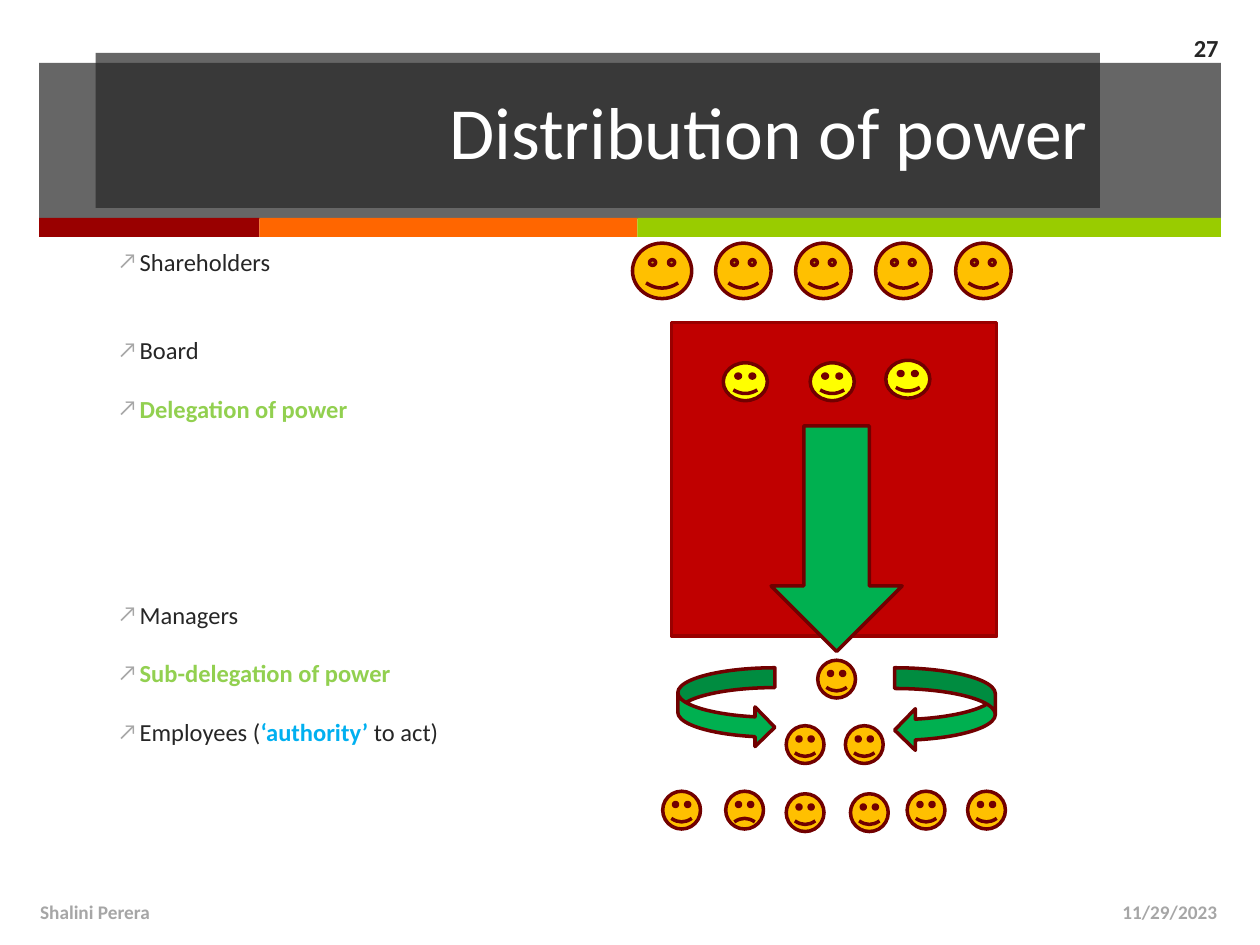
from collections import namedtuple
from dataclasses import dataclass

from lxml import etree
from pptx import Presentation
from pptx.dml import color
from pptx.enum import shapes, text
from pptx.oxml import ns
from pptx.util import Inches, Pt

COLUMNS, ROWS = 100, 75
SLIDE_WIDTH, SLIDE_HEIGHT = Inches(10), Inches(7.5)
SHAPE = shapes.MSO_SHAPE
RIGHT = text.PP_ALIGN.RIGHT
LEFT = text.PP_ALIGN.LEFT
MIDDLE = text.MSO_ANCHOR.MIDDLE
TOP = text.MSO_ANCHOR.TOP

Box = namedtuple("Box", "x y w h")


@dataclass(frozen=True)
class Theme:
    font: str = "Calibri"
    ink: str = "262626"
    white: str = "FFFFFF"
    muted: str = "A6A6A6"
    bands: tuple = ("990000", "FF6600", "99CC00")
    power: str = "92D050"
    authority: str = "00B0F0"
    board: str = "C00000"
    board_edge: str = "990000"
    director: str = "FFFF00"
    person: str = "FFC000"
    arrow: str = "00B050"
    edge: str = "710000"
    title_size: int = 42
    body_size: int = 14
    footer_size: int = 11
    edge_width: int = 2
    row_pitch: float = 16.8


THEME = Theme()


def apply(target, values):
    for name, value in values.items():
        setattr(target, name, value)


def inside(box, x, y, w, h):
    return Box(box.x + x, box.y + y, w, h)


def emu(box):
    column, row = SLIDE_WIDTH / COLUMNS, SLIDE_HEIGHT / ROWS
    return [round(n * unit) for n, unit in zip(box, (column, row, column, row))]


def draw(slide, kind, box, fill, edge=None, alpha=None):
    drawn = slide.shapes.add_shape(kind, *emu(box))
    drawn.shadow.inherit = False
    drawn.fill.solid()
    drawn.fill.fore_color.rgb = color.RGBColor.from_string(fill)
    if alpha:
        tint = drawn.fill._xPr.find(".//" + ns.qn("a:srgbClr"))
        etree.SubElement(tint, ns.qn("a:alpha"), val=str(alpha * 1000))
    if edge:
        drawn.line.color.rgb = color.RGBColor.from_string(edge)
        drawn.line.width = Pt(THEME.edge_width)
    else:
        drawn.line.fill.background()
    return drawn


def add_run(paragraph, words, size, ink, bold=False):
    run = paragraph.add_run()
    run.text = words
    apply(run.font, {"name": THEME.font, "size": Pt(size), "bold": bold})
    run.font.color.rgb = color.RGBColor.from_string(ink)


def write(holder, words, size, ink, align, bold=False):
    frame = holder.text_frame
    apply(frame, {"word_wrap": True, "vertical_anchor": MIDDLE})
    paragraph = frame.paragraphs[0]
    paragraph.alignment = align
    add_run(paragraph, words, size, ink, bold)


def label(slide, box, *style):
    write(slide.shapes.add_textbox(*emu(box)), *style)


def add_bullet(paragraph):
    properties = paragraph._p.get_or_add_pPr()
    indent = Inches(0.17)
    properties.set("marL", str(indent))
    properties.set("indent", str(-indent))
    tint = etree.SubElement(properties, ns.qn("a:buClr"))
    etree.SubElement(tint, ns.qn("a:srgbClr"), val=THEME.muted)
    etree.SubElement(properties, ns.qn("a:buSzPct"), val="90000")
    etree.SubElement(properties, ns.qn("a:buFont"), typeface=THEME.font)
    etree.SubElement(properties, ns.qn("a:buChar"), char="↗")


def header(slide, box):
    draw(slide, SHAPE.RECTANGLE, inside(box, 0, 0, box.w, 12.4), THEME.ink, alpha=70)
    x = 0
    for width, fill in zip((17.5, 30, 46.3), THEME.bands):
        draw(slide, SHAPE.RECTANGLE, inside(box, x, 12.3, width, 1.5), fill)
        x += width
    title = draw(slide, SHAPE.RECTANGLE, inside(box, 4.5, -0.8, 79.7, 12.3), THEME.ink, alpha=70)
    write(title, "Distribution of power", THEME.title_size, THEME.white, RIGHT)
    label(slide, inside(box, 87.7, -3.2, 6.9, 3.9), "27", THEME.body_size, THEME.ink, RIGHT, True)


def topics(slide, box):
    plain, power, authority = (THEME.ink, False), (THEME.power, True), (THEME.authority, True)
    entries = [
        (0, [("Shareholders", plain)]),
        (2, [("Board", plain)]),
        (1, [("Delegation of power", power)]),
        (6, [("Managers", plain)]),
        (1, [("Sub-delegation of power", power)]),
        (1, [("Employees (", plain), ("‘authority’ ", authority), ("to act)", plain)]),
    ]
    frame = slide.shapes.add_textbox(*emu(box)).text_frame
    apply(frame, {"word_wrap": True, "vertical_anchor": TOP})
    for index, (gap_rows, pieces) in enumerate(entries):
        paragraph = frame.add_paragraph() if index else frame.paragraphs[0]
        apply(paragraph, {"alignment": LEFT, "space_before": Pt(gap_rows * THEME.row_pitch)})
        add_bullet(paragraph)
        for words, (ink, bold) in pieces:
            add_run(paragraph, words, THEME.body_size, ink, bold)


def face(slide, box, fill=THEME.person, sad=False):
    drawn = draw(slide, SHAPE.SMILEY_FACE, box, fill, THEME.edge)
    if sad:
        drawn.adjustments[0] = -0.047


def hierarchy(slide, box):
    draw(slide, SHAPE.RECTANGLE, inside(box, 3.3, 6.6, 25.8, 24.9), THEME.board, THEME.board_edge)
    face(slide, inside(box, 0.2, 0.3, 4.7, 4.4))
    for place in range(4):
        face(slide, inside(box, 6.8 + 6.35 * place, 0.3, 4.4, 4.4))
    for x, y in ((7.4, 9.8), (14.3, 9.8), (20.3, 9.6)):
        face(slide, inside(box, x, y, 3.5, 3), THEME.director)
    managers = [(14.9, 33.4), (12.4, 38.6), (17.1, 38.6)]
    staff = [(2.6, 43.8), (12.4, 44), (17.5, 44), (22, 43.8), (26.8, 43.8)]
    for x, y in managers + staff:
        face(slide, inside(box, x, y, 3, 3))
    face(slide, inside(box, 7.6, 43.8, 3, 3), sad=True)
    delegation = [
        (SHAPE.DOWN_ARROW, (11.2, 14.8, 10.4, 17.9)),
        (SHAPE.CURVED_RIGHT_ARROW, (3.8, 34, 7.7, 6.3)),
        (SHAPE.CURVED_LEFT_ARROW, (21, 34, 8, 6.6)),
    ]
    for kind, place in delegation:
        draw(slide, kind, inside(box, *place), THEME.arrow, THEME.edge)


def footer(slide, box):
    style = THEME.footer_size, THEME.muted
    label(slide, inside(box, 0, 0, 67, box.h), "Shalini Perera", *style, LEFT, True)
    label(slide, inside(box, box.w - 23.3, 0, 23.3, box.h), "11/29/2023", *style, RIGHT, True)


def main():
    deck = Presentation()
    apply(deck, {"slide_width": SLIDE_WIDTH, "slide_height": SLIDE_HEIGHT})
    slide = deck.slides.add_slide(deck.slide_layouts[6])
    header(slide, Box(3.1, 5, 93.8, 13.8))
    topics(slide, Box(8.4, 19.1, 79.7, 50.4))
    hierarchy(slide, Box(50, 19, 30.5, 47))
    footer(slide, Box(2.2, 70.4, 95.4, 4))
    deck.save("out.pptx")


if __name__ == "__main__":
    main()
